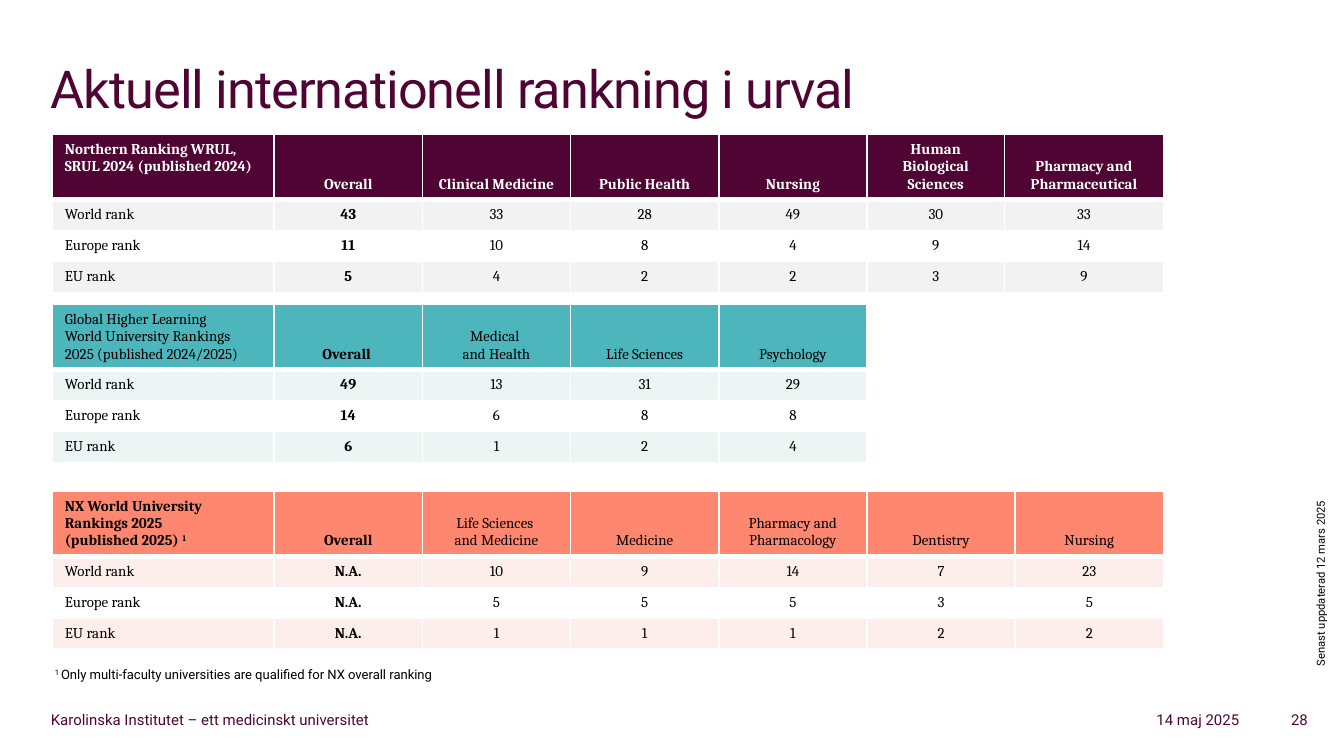
"""Build a slide with three tables of international university rankings."""

from dataclasses import dataclass

from lxml.etree import SubElement
from pptx import Presentation
from pptx.dml.color import RGBColor
from pptx.enum.text import MSO_ANCHOR, PP_ALIGN
from pptx.oxml.ns import qn
from pptx.util import Inches, Pt

SLIDE_WIDTH = Inches(10)
SLIDE_HEIGHT = SLIDE_WIDTH * 9 // 16
COLUMN = SLIDE_WIDTH / 100
ROW = SLIDE_HEIGHT / 56.25

PLUM = RGBColor(0x4F, 0x04, 0x33)
TEAL = RGBColor(0x4D, 0xB5, 0xBC)
CORAL = RGBColor(0xFF, 0x87, 0x6F)
PALE_GREY = RGBColor(0xF2, 0xF2, 0xF2)
PALE_TEAL = RGBColor(0xED, 0xF4, 0xF4)
PALE_CORAL = RGBColor(0xFE, 0xEE, 0xEB)
WHITE = RGBColor(0xFF, 0xFF, 0xFF)
BLACK = RGBColor(0x00, 0x00, 0x00)

TABLE_LEFT = 3.9
LABEL_WIDTH = 16.5
RANK_WIDTH = 11.03
BODY_ROW = 2.3
CELL_MARGIN = 0.93
RANK_LABELS = ("World rank", "Europe rank", "EU rank")


@dataclass(frozen=True)
class Style:
    """Character format of a run."""

    size: float
    font: str
    color: RGBColor
    bold: bool = False
    spacing: int = 0


@dataclass(frozen=True)
class Label:
    """Text box placed in grid columns and rows."""

    text: str
    left: float
    top: float
    width: float
    height: float
    style: Style
    alignment: PP_ALIGN = PP_ALIGN.LEFT
    rotation: int = 0
    mark: str = ""


@dataclass(frozen=True)
class Ranking:
    """Ranking table with its headers, ranks and colours."""

    top: float
    header_height: float
    widths: tuple[float, ...]
    headers: tuple[str, ...]
    ranks: tuple[tuple[str, ...], ...]
    fill: RGBColor
    band: RGBColor
    header_color: RGBColor
    bold_headers: tuple[int, ...]
    mark: str = ""


FOOTER = Style(8, "Roboto", PLUM)

LABELS = (
    Label("Aktuell internationell rankning i urval", 2.8, 3.7, 94.4, 9.4,
          Style(28, "Roboto", PLUM, spacing=-50)),
    Label("14 maj 2025", 72.4, 52.4, 20.8, 1.9, FOOTER, PP_ALIGN.RIGHT),
    Label("28", 90.8, 52.4, 7.5, 1.9, FOOTER, PP_ALIGN.RIGHT),
    Label("Senast uppdaterad 12 mars 2025", 84.9, 35.7, 27.2, 2.5,
          Style(6, "Roboto", BLACK), rotation=270),
    Label("Only multi-faculty universities are qualified for NX overall ranking",
          3.1, 49.1, 81.7, 2.2, Style(7, "Roboto", BLACK), mark="1 "),
    Label("Karolinska Institutet – ett medicinskt universitet",
          2.8, 52.4, 30.7, 1.9, FOOTER),
)

RANKINGS = (
    Ranking(
        10, 4.75, (LABEL_WIDTH, *[RANK_WIDTH] * 4, 10.24, 11.82),
        ("Northern Ranking WRUL, SRUL 2024 (published 2024)", "Overall",
         "Clinical Medicine", "Public Health", "Nursing",
         "Human Biological Sciences", "Pharmacy and Pharmaceutical"),
        (("43", "33", "28", "49", "30", "33"),
         ("11", "10", "8", "4", "9", "14"),
         ("5", "4", "2", "2", "3", "9")),
        PLUM, PALE_GREY, WHITE, tuple(range(7)),
    ),
    Ranking(
        22.65, 4.85, (LABEL_WIDTH, *[RANK_WIDTH] * 4),
        ("Global Higher Learning\nWorld University Rankings\n2025 (published 2024/2025)",
         "Overall ", "Medical \vand Health", "Life Sciences", "Psychology"),
        (("49", "13", "31", "29"), ("14", "6", "8", "8"), ("6", "1", "2", "4")),
        TEAL, PALE_TEAL, BLACK, (1,),
    ),
    Ranking(
        36.55, 4.85, (LABEL_WIDTH, *[RANK_WIDTH] * 6),
        ("NX World University Rankings 2025 \v(published 2025) ", "Overall",
         "Life Sciences \vand Medicine", "Medicine", "Pharmacy and\nPharmacology",
         "Dentistry", "Nursing"),
        (("N.A.", "10", "9", "14", "7", "23"),
         ("N.A.", "5", "5", "5", "3", "5"),
         ("N.A.", "1", "1", "1", "2", "2")),
        CORAL, PALE_CORAL, BLACK, (0, 1), "1",
    ),
)


def columns(count: float) -> int:
    """Return the length of a number of grid columns."""
    return round(count * COLUMN)


def rows(count: float) -> int:
    """Return the length of a number of grid rows."""
    return round(count * ROW)


def add_run(paragraph, text: str, style: Style, raised: bool = False) -> None:
    """Add one formatted run to a paragraph."""
    run = paragraph.add_run()
    run.text = text
    run.font.size = Pt(style.size)
    run.font.name = style.font
    run.font.bold = style.bold
    run.font.color.rgb = style.color
    properties = run.font._element
    if style.spacing:
        properties.set("spc", str(style.spacing))
    if raised:
        properties.set("baseline", "30000")


def add_label(slide, label: Label) -> None:
    """Draw a text box, with its raised mark first."""
    shape = slide.shapes.add_textbox(
        columns(label.left), rows(label.top), columns(label.width), rows(label.height))
    shape.rotation = label.rotation
    shape.text_frame.word_wrap = True
    paragraph = shape.text_frame.paragraphs[0]
    paragraph.alignment = label.alignment
    if label.mark:
        add_run(paragraph, label.mark, label.style, raised=True)
    add_run(paragraph, label.text, label.style)


def add_border(cell, edge: str, width: float) -> None:
    """Give one edge of a cell a white line."""
    line = SubElement(cell._tc.get_or_add_tcPr(), qn(f"a:{edge}"), w=str(Pt(width)))
    fill = SubElement(line, qn("a:solidFill"))
    SubElement(fill, qn("a:srgbClr"), val=str(WHITE))


def fill_cell(cell, text: str, style: Style, alignment: PP_ALIGN,
              fill: RGBColor, mark: str = "") -> None:
    """Write the lines of a cell and colour it."""
    cell.fill.solid()
    cell.fill.fore_color.rgb = fill
    cell.margin_left = cell.margin_right = columns(CELL_MARGIN)
    frame = cell.text_frame
    for index, block in enumerate(text.split("\n")):
        paragraph = frame.add_paragraph() if index else frame.paragraphs[0]
        paragraph.alignment = alignment
        for position, line in enumerate(block.split("\v")):
            if position:
                paragraph.add_line_break()
            add_run(paragraph, line, style)
    if mark:
        add_run(paragraph, mark, style, raised=True)


def add_ranking(slide, ranking: Ranking) -> None:
    """Draw a ranking table."""
    heights = (ranking.header_height,) + (BODY_ROW,) * len(RANK_LABELS)
    table = slide.shapes.add_table(
        len(heights), len(ranking.widths), columns(TABLE_LEFT), rows(ranking.top),
        columns(sum(ranking.widths)), rows(sum(heights))).table
    table.horz_banding = False
    for column, width in zip(table.columns, ranking.widths):
        column.width = columns(width)
    for row, height in zip(table.rows, heights):
        row.height = rows(height)
    body = [(label, *ranks) for label, ranks in zip(RANK_LABELS, ranking.ranks)]
    for row_index, texts in enumerate([ranking.headers, *body]):
        is_header = row_index == 0
        bold_columns = ranking.bold_headers if is_header else (1,)
        color = ranking.header_color if is_header else BLACK
        band = ranking.band if row_index % 2 else WHITE
        for column_index, text in enumerate(texts):
            cell = table.cell(row_index, column_index)
            for edge in ("lnL", "lnR", "lnT") if is_header else ("lnL", "lnR"):
                add_border(cell, edge, 1)
            add_border(cell, "lnB", 3 if is_header else 1)
            if is_header and column_index:
                cell.vertical_anchor = MSO_ANCHOR.BOTTOM
            fill_cell(cell, text, Style(8, "Cambria", color, column_index in bold_columns),
                      PP_ALIGN.CENTER if column_index else PP_ALIGN.LEFT,
                      ranking.fill if is_header else band,
                      ranking.mark if is_header and not column_index else "")


def main() -> None:
    """Build and save the presentation."""
    presentation = Presentation()
    presentation.slide_width = SLIDE_WIDTH
    presentation.slide_height = SLIDE_HEIGHT
    slide = presentation.slides.add_slide(presentation.slide_layouts[6])
    for ranking in RANKINGS:
        add_ranking(slide, ranking)
    for label in LABELS:
        add_label(slide, label)
    presentation.save("out.pptx")


if __name__ == "__main__":
    main()
